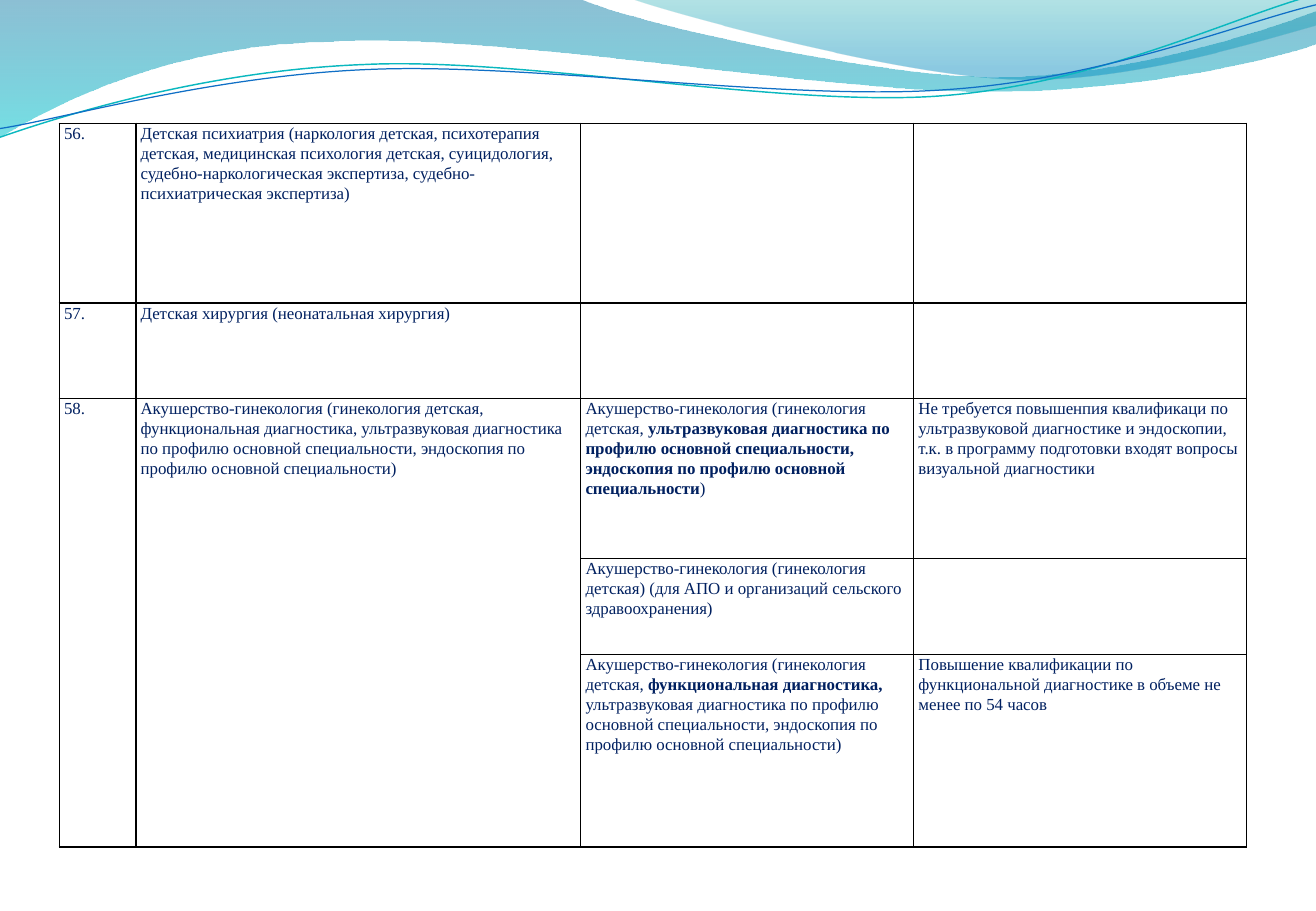
from dataclasses import dataclass
from math import cos, radians, sin
from typing import NamedTuple, Optional

from lxml.etree import SubElement
from pptx import Presentation
from pptx.dml.color import RGBColor as RGB
from pptx.oxml import parse_xml
from pptx.oxml.ns import nsdecls, qn
from pptx.util import Cm, Pt


@dataclass(frozen=True)
class Theme:
    font: str = "Times New Roman"
    size: float = 10
    spacing: float = 1.07
    text: str = "002060"
    border: str = "000000"
    border_width: float = 1
    teal: str = "0AB8BF"
    blue: str = "0F6FC6"
    wave_top: str = "0074A1"
    wave_bottom: str = "00C6CF"
    crest_top: str = "00A1A9"
    crest_bottom: str = "008BBF"


THEME = Theme()


class Stop(NamedTuple):
    position: float
    color: str
    opacity: int  # percent


class Wave(NamedTuple):
    frame: tuple  # left, top, width, height
    start: tuple
    segments: tuple  # two numbers for a straight line, six for a Bézier curve
    stops: tuple = ()
    line: Optional[str] = None
    width: float = 0
    rotation: float = 0


class Run(NamedTuple):
    text: str
    bold: bool = False


class Entry(NamedTuple):
    row: int
    col: int
    runs: tuple


# Header waves, in centimetres as seen on the slide
WAVES = (
    Wave((-0.03, -0.03, 27.58, 2.9), (0, 0),
         ((12.12, -0.03),
          (13.08, 0.43, 18.26, 1.6, 20.88, 1.6),
          (23.47, 1.6, 26.37, 0.66, 27.51, 0.23),
          (27.53, 0.91),
          (27.05, 1.12, 23.93, 1.93, 20.52, 1.91),
          (17.12, 1.91, 10.52, 0.71, 7.09, 0.86),
          (3.56, 0.91, 1.27, 2.11, -0.03, 2.87),
          (0, 0)),
         stops=(Stop(0, THEME.wave_top, 45), Stop(1, THEME.wave_bottom, 55))),
    Wave((13.18, -0.03, 14.33, 1.78), (13.18, -0.03),
         ((14.02, 0.28, 18.77, 1.57, 21.16, 1.65),
          (23.55, 1.75, 26.47, 0.81, 27.51, 0.53),
          (27.51, 0),
          (13.18, -0.03)),
         stops=(Stop(0, THEME.crest_top, 30), Stop(0.8, THEME.crest_bottom, 45))),
    Wave((-0.05, 0.56, 27.58, 1.8), (0, 2.87),
         ((1.32, 2.41, 4.34, 1.47, 7.62, 1.35),
          (10.87, 1.19, 16.31, 2.24, 19.61, 2.01),
          (22.91, 1.78, 25.83, 0.33, 27.46, -0.1)),
         line=THEME.teal, width=0.85, rotation=357.3),
    Wave((-0.05, 0.76, 27.61, 1.47), (0, 2.69),
         ((1.3, 2.49, 4.5, 1.57, 7.8, 1.45),
          (11.07, 1.32, 16.43, 2.11, 19.71, 1.88),
          (23.01, 1.68, 25.91, 0.48, 27.51, 0.1)),
         line=THEME.blue, width=0.75, rotation=357.3),
)

# Table of specialities
COLS = (1.6, 9.3, 6.96, 6.96)
ROWS = (3.76, 1.99, 3.35, 2.01, 4.02)
ENTRIES = (
    Entry(0, 0, (Run("56."),)),
    Entry(0, 1, (Run("Детская психиатрия (наркология детская, психотерапия детская, "
                     "медицинская психология детская, суицидология, "
                     "судебно-наркологическая экспертиза, "
                     "судебно-психиатрическая экспертиза)"),)),
    Entry(1, 0, (Run("57."),)),
    Entry(1, 1, (Run("Детская хирургия (неонатальная хирургия)"),)),
    Entry(2, 0, (Run("58."),)),
    Entry(2, 1, (Run("Акушерство-гинекология (гинекология детская, функциональная "
                     "диагностика, ультразвуковая диагностика по профилю основной "
                     "специальности, эндоскопия по профилю основной специальности)"),)),
    Entry(2, 2, (Run("Акушерство-гинекология (гинекология детская, "),
                 Run("ультразвуковая диагностика по профилю основной специальности, "
                     "эндоскопия по профилю основной специальности", True),
                 Run(")"))),
    Entry(2, 3, (Run("Не требуется повышенпия квалификаци по ультразвуковой "
                     "диагностике и эндоскопии, т.к. в программу подготовки входят "
                     "вопросы визуальной диагностики"),)),
    Entry(3, 2, (Run("Акушерство-гинекология (гинекология детская) (для АПО и "
                     "организаций сельского здравоохранения)"),)),
    Entry(4, 2, (Run("Акушерство-гинекология (гинекология детская, "),
                 Run("функциональная диагностика,", True),
                 Run(" ультразвуковая диагностика по профилю основной специальности, "
                     "эндоскопия по профилю основной специальности)"))),
    Entry(4, 3, (Run("Повышение квалификации по функциональной диагностике в объеме "
                     "не менее по 54 часов"),)),
)


def add_outline(shapes, wave: Wave):
    """Add a freeform whose path holds the wave's lines and Bézier curves."""
    left, top, width, height = wave.frame
    angle = radians(-wave.rotation)

    def local(x: float, y: float) -> tuple:
        dx, dy = x - left - width / 2, y - top - height / 2
        return (Cm(width / 2 + dx * cos(angle) - dy * sin(angle)),
                Cm(height / 2 + dx * sin(angle) + dy * cos(angle)))

    builder = shapes.build_freeform(*map(Cm, wave.start))
    builder.add_line_segments([tuple(map(Cm, seg[-2:])) for seg in wave.segments],
                              close=False)
    s = builder.convert_to_shape()
    s.left, s.top, s.width, s.height = map(Cm, wave.frame)
    s.rotation = wave.rotation
    outline = next(s._element.iter(qn("a:path")))
    outline.clear()
    outline.set("w", str(s.width))
    outline.set("h", str(s.height))
    for i, seg in enumerate((wave.start, *wave.segments)):
        tag = "a:moveTo" if i == 0 else "a:lnTo" if len(seg) == 2 else "a:cubicBezTo"
        step = SubElement(outline, qn(tag))
        for x, y in zip(seg[::2], seg[1::2]):
            px, py = local(x, y)
            pt = SubElement(step, qn("a:pt"))
            pt.set("x", str(px))
            pt.set("y", str(py))
    if wave.stops:
        SubElement(outline, qn("a:close"))
    return s


def draw_wave(shapes, wave: Wave) -> None:
    s = add_outline(shapes, wave)
    s.shadow.inherit = False
    if wave.line:
        s.fill.background()
        s.line.color.rgb = RGB.from_string(wave.line)
        s.line.width = Pt(wave.width)
        return
    s.line.fill.background()
    s.fill.gradient()
    s.fill.gradient_angle = 270  # top to bottom
    for target, stop in zip(s.fill.gradient_stops, wave.stops):
        target.position = stop.position
        target.color.rgb = RGB.from_string(stop.color)
    for clr, stop in zip(s._element.spPr.iter(qn("a:srgbClr")), wave.stops):
        SubElement(clr, qn("a:alpha")).set("val", str(stop.opacity * 1000))


def format_cell(cell) -> None:
    cell.margin_left = cell.margin_right = Cm(0.1)
    cell.margin_top = cell.margin_bottom = 0
    cell.fill.background()
    tcPr = cell._tc.get_or_add_tcPr()
    for i, side in enumerate("LRTB"):
        tcPr.insert(i, parse_xml(
            f'<a:ln{side} {nsdecls("a")} w="{Pt(THEME.border_width)}"><a:solidFill>'
            f'<a:srgbClr val="{THEME.border}"/></a:solidFill></a:ln{side}>'))


def write_cell(cell, runs: tuple) -> None:
    p = cell.text_frame.paragraphs[0]
    p.line_spacing = THEME.spacing
    for run in runs:
        r = p.add_run()
        r.text = run.text
        r.font.name, r.font.size, r.font.bold = THEME.font, Pt(THEME.size), run.bold
        r.font.color.rgb = RGB.from_string(THEME.text)


def draw_table(shapes) -> None:
    table = shapes.add_table(len(ROWS), len(COLS), Cm(1.24), Cm(2.58),
                             Cm(sum(COLS)), Cm(sum(ROWS))).table
    table.first_row = table.horz_banding = False
    for column, width in zip(table.columns, COLS):
        column.width = Cm(width)
    for row, height in zip(table.rows, ROWS):
        row.height = Cm(height)
    for cell in table.iter_cells():
        format_cell(cell)
    for col in (0, 1):  # entry 58 spans its three variants
        table.cell(2, col).merge(table.cell(4, col))
    for entry in ENTRIES:
        write_cell(table.cell(entry.row, entry.col), entry.runs)


prs = Presentation()
prs.slide_width, prs.slide_height = Cm(27.51), Cm(19.05)
slide = prs.slides.add_slide(prs.slide_layouts[6])
for wave in WAVES:
    draw_wave(slide.shapes, wave)
draw_table(slide.shapes)
prs.save("out.pptx")
